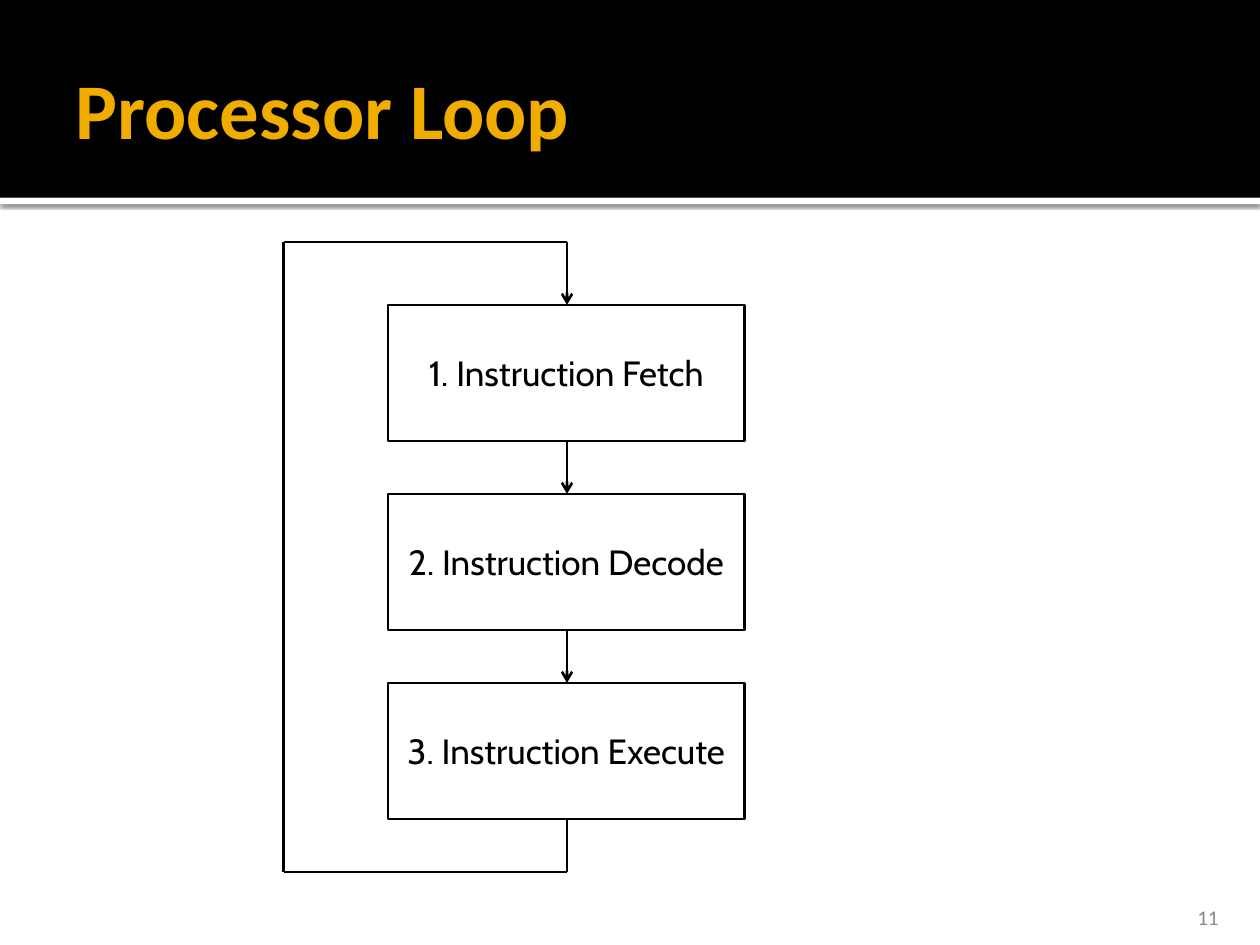
from itertools import pairwise

from lxml.etree import SubElement
from pptx import Presentation
from pptx.dml.color import RGBColor
from pptx.enum.shapes import MSO_CONNECTOR, MSO_SHAPE
from pptx.enum.text import MSO_ANCHOR, MSO_AUTO_SIZE, PP_ALIGN
from pptx.oxml import parse_xml
from pptx.oxml.ns import nsdecls, qn
from pptx.util import Inches, Pt

COLORS = {
    "black": "000000",
    "white": "FFFFFF",
    "gold": "F0AD00",
    "gray": "898989",
}


class SlideBuilder:
    title_font = "Calibri"
    body_font = "Cabin"
    line_width = Pt(1.5)

    def __init__(self, page):
        self.page = page

    def color(self, name):
        return RGBColor.from_string(COLORS[name])

    def add_text(self, shape, text, size, font, color, align, anchor, insets, bold=False):
        frame = shape.text_frame
        frame.word_wrap = True
        frame.auto_size = MSO_AUTO_SIZE.NONE
        frame.vertical_anchor = anchor
        (frame.margin_left, frame.margin_top,
         frame.margin_right, frame.margin_bottom) = map(Inches, insets)
        para = frame.paragraphs[0]
        para.alignment = align
        span = para.add_run()
        span.text = text
        span.font.size = Pt(size)
        span.font.name = font
        span.font.bold = bold
        span.font.color.rgb = self.color(color)

    def title(self, text, left, top, width, height):
        title = self.page.shapes.title
        title.left, title.top = Inches(left), Inches(top)
        title.width, title.height = Inches(width), Inches(height)
        self.add_text(title, text, 45, self.title_font, "gold", PP_ALIGN.LEFT,
                      MSO_ANCHOR.MIDDLE, (0.1, 0.05, 0.05, 0.05), bold=True)

    def rectangle(self, left, top, width, height):
        box = self.page.shapes.add_shape(
            MSO_SHAPE.RECTANGLE, Inches(left), Inches(top), Inches(width), Inches(height))
        box.shadow.inherit = False
        return box

    def band(self, top, height, color, shadow=False):
        band = self.rectangle(0, top, 10, height)
        band.fill.solid()
        band.fill.fore_color.rgb = self.color(color)
        band.line.fill.background()
        if shadow:
            band.element.spPr.find(qn("a:effectLst")).append(parse_xml(
                f'<a:outerShdw {nsdecls("a")} blurRad="{Pt(2.5)}" dist="{Pt(0.8)}" '
                f'dir="5400000" algn="tl" rotWithShape="0">'
                f'<a:srgbClr val="{COLORS["black"]}"><a:alpha val="60000"/></a:srgbClr>'
                f'</a:outerShdw>'))
        self.page.shapes.title.element.addprevious(band.element)

    def step(self, text, left, top, width, height):
        box = self.rectangle(left, top, width, height)
        box.fill.background()
        box.line.color.rgb = self.color("black")
        box.line.width = self.line_width
        self.add_text(box, text, 20, self.body_font, "black", PP_ALIGN.CENTER,
                      MSO_ANCHOR.MIDDLE, (0.1, 0.05, 0.1, 0.05))

    def connector(self, start, end, arrow=False):
        line = self.page.shapes.add_connector(
            MSO_CONNECTOR.STRAIGHT, *map(Inches, (*start, *end)))
        line.line.color.rgb = self.color("black")
        line.line.width = self.line_width
        properties = line.element.spPr
        if arrow:
            SubElement(properties.find(qn("a:ln")), qn("a:tailEnd"), type="arrow")
        SubElement(properties, qn("a:effectLst"))

    def page_number(self, text, left, top, width, height):
        box = self.page.shapes.add_textbox(
            Inches(left), Inches(top), Inches(width), Inches(height))
        self.add_text(box, text, 12, self.title_font, "gray", PP_ALIGN.RIGHT,
                      MSO_ANCHOR.BOTTOM, (0.1, 0.05, 0.1, 0))


def main():
    deck = Presentation()
    deck.slide_width, deck.slide_height = Inches(10), Inches(7.5)
    builder = SlideBuilder(deck.slides.add_slide(deck.slide_layouts[5]))

    builder.band(1.57, 0.05, "white", shadow=True)
    builder.band(0, 1.57, "black")
    builder.title("Processor Loop", 0.5, 0.17, 9, 1.37)
    builder.page_number("11", 8.97, 7.08, 0.8, 0.3)

    steps = ["Instruction Fetch", "Instruction Decode", "Instruction Execute"]
    left, width, height = 3.08, 2.83, 1.08
    center, loop_left = 4.5, 2.25
    first_top, pitch = 2.42, 1.5
    tops = [first_top + pitch * index for index in range(len(steps))]

    for number, (name, top) in enumerate(zip(steps, tops), 1):
        builder.step(f"{number}. {name}", left, top, width, height)
    for upper, lower in pairwise(tops):
        builder.connector((center, upper + height), (center, lower), arrow=True)

    loop_top, loop_bottom = 1.92, 6.92
    loop = [
        (center, tops[-1] + height),
        (center, loop_bottom),
        (loop_left, loop_bottom),
        (loop_left, loop_top),
        (center, loop_top),
        (center, first_top),
    ]
    for start, end in pairwise(loop):
        builder.connector(start, end, arrow=end == loop[-1])

    deck.save("out.pptx")


if __name__ == "__main__":
    main()
